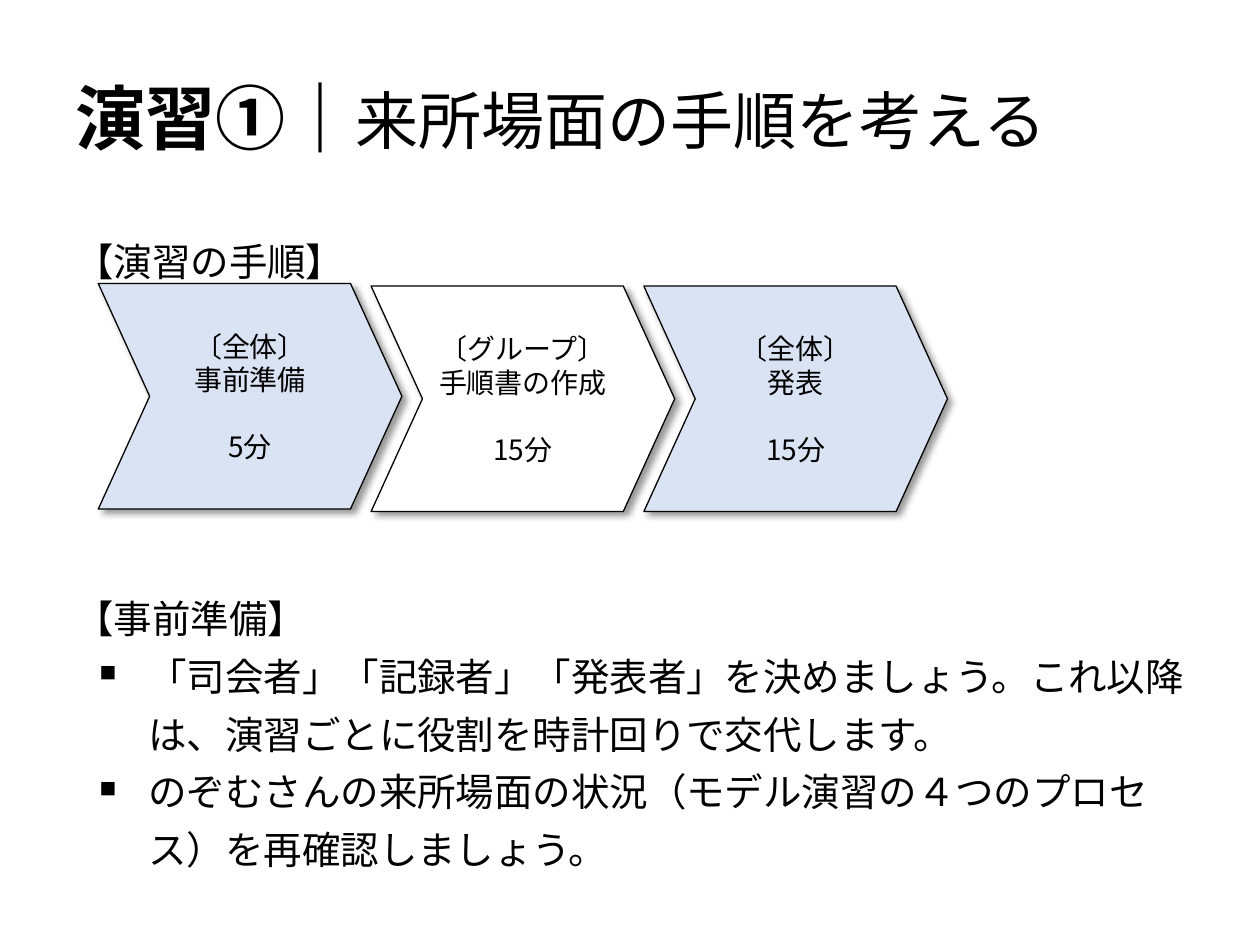
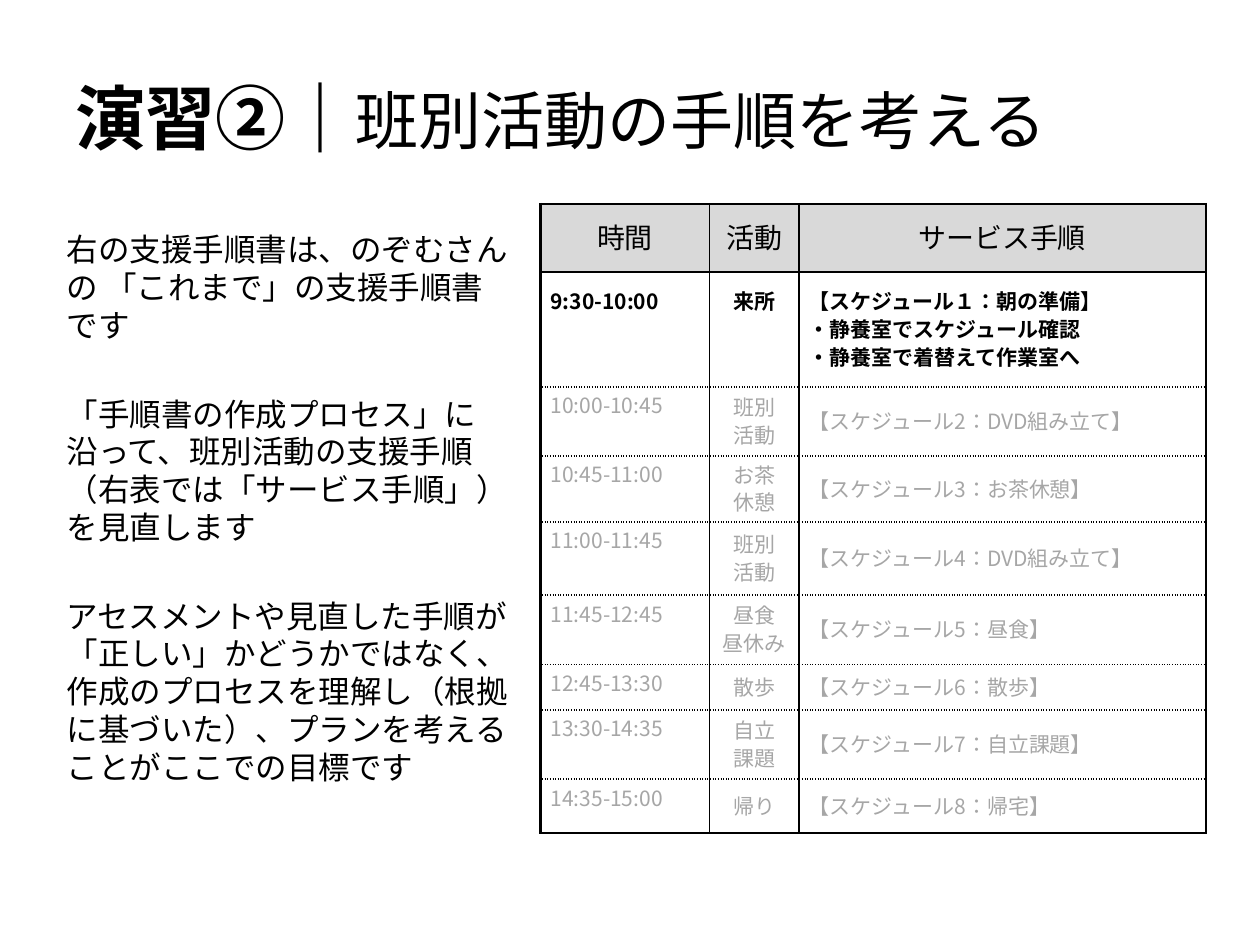
import lxml.etree
import pptx
import pptx.dml.color
import pptx.enum.lang
import pptx.enum.shapes
import pptx.enum.text
import pptx.oxml.ns
import pptx.util

Inches = pptx.util.Inches
Pt = pptx.util.Pt
ALIGN = pptx.enum.text.PP_ALIGN
ANCHOR = pptx.enum.text.MSO_ANCHOR

FONT = "Noto Sans CJK JP"
BLACK, WHITE, PALE_BLUE = "000000", "FFFFFF", "DAE3F3"
HEADER_GRAY, FADED = "D9D9D9", "A6A6A6"

TITLE_BOX = (0.5, 0.3, 9, 1.25)

STEPS = [
    ("〔全体〕", "事前準備", "5分"),
    ("〔グループ〕", "手順書の作成", "15分"),
    ("〔全体〕", "発表", "15分"),
]
PREPARATIONS = [
    "「司会者」「記録者」「発表者」を決めましょう。これ以降は、演習ごとに役割を時計回りで交代します。",
    "のぞむさんの来所場面の状況（モデル演習の４つのプロセス）を再確認しましょう。",
]
EXPLANATIONS = [
    "右の支援手順書は、のぞむさんの 「これまで」の支援手順書です",
    "「手順書の作成プロセス」に沿って、班別活動の支援手順（右表では「サービス手順」）を見直します",
    "アセスメントや見直した手順が「正しい」かどうかではなく、作成のプロセスを理解し"
    "（根拠に基づいた）、プランを考えることがここでの目標です",
]
# Row height, then the lines of each cell
SCHEDULE = [
    (0.54, "時間", "活動", "サービス手順"),
    (0.91, "9:30-10:00", "来所",
     "【スケジュール１：朝の準備】\n・静養室でスケジュール確認\n・静養室で着替えて作業室へ"),
    (0.55, "10:00-10:45", "班別\n活動", "【スケジュール2：DVD組み立て】"),
    (0.48, "10:45-11:00", "お茶\n休憩", "【スケジュール3：お茶休憩】"),
    (0.58, "11:00-11:45", "班別\n活動", "【スケジュール4：DVD組み立て】"),
    (0.55, "11:45-12:45", "昼食\n昼休み", "【スケジュール5：昼食】"),
    (0.36, "12:45-13:30", "散歩", "【スケジュール6：散歩】"),
    (0.55, "13:30-14:35", "自立\n課題", "【スケジュール7：自立課題】"),
    (0.43, "14:35-15:00", "帰り", "【スケジュール8：帰宅】"),
]
COLUMN_WIDTHS = (1.34, 0.71, 3.23)


# Shared helpers
def rgb(color):
    return pptx.dml.color.RGBColor.from_string(color)


def add_xml(parent, tag, **attributes):
    element = lxml.etree.SubElement(parent, pptx.oxml.ns.qn(tag))
    for name, value in attributes.items():
        element.set(name, str(value))
    return element


def style_font(font, size, color=BLACK, bold=False):
    font.size = Pt(size)
    font.bold = bold
    font.color.rgb = rgb(color)
    font.name = FONT
    font.language_id = pptx.enum.lang.MSO_LANGUAGE_ID.JAPANESE
    add_xml(font._rPr, "a:ea", typeface=FONT)


def write_lines(frame, lines, size, spacing, align=ALIGN.LEFT, color=BLACK, bold=False):
    """Fill a text frame, one paragraph a line, with a fixed line height."""
    for index, line in enumerate(lines):
        para = frame.paragraphs[0] if index == 0 else frame.add_paragraph()
        para.text = line
        para.alignment = align
        para.line_spacing = Pt(spacing)
        para.space_before = Pt(0)
        style_font(para.font, size, color, bold)
    return frame.paragraphs


def set_margins(target, left, top, right, bottom):
    target.margin_left, target.margin_top = Inches(left), Inches(top)
    target.margin_right, target.margin_bottom = Inches(right), Inches(bottom)


def add_text_box(page, area):
    box = page.shapes.add_textbox(*map(Inches, area))
    box.text_frame.word_wrap = True
    return box.text_frame


def add_title(page, area, label, topic):
    frame = add_text_box(page, area)
    frame.vertical_anchor = ANCHOR.MIDDLE
    for text, size, bold in ((label, 40, True), (topic, 36, False)):
        span = frame.paragraphs[0].add_run()
        span.text = text
        style_font(span.font, size, bold=bold)


# Slide 1: steps and preparation
def add_bullet(para):
    properties = para._p.get_or_add_pPr()
    properties.set("marL", str(Inches(0.58)))
    properties.set("indent", str(Inches(-0.39)))
    bullet_size = add_xml(properties, "a:buSzPct", val=60000)
    bullet = add_xml(properties, "a:buChar", char="■")
    defaults = properties.find(pptx.oxml.ns.qn("a:defRPr"))
    defaults.addprevious(bullet_size)
    defaults.addprevious(bullet)


def add_preparation(page, area):
    lines = ["【演習の手順】", "【事前準備】"] + PREPARATIONS
    paragraphs = write_lines(add_text_box(page, area), lines, 22, 33)
    paragraphs[1].space_before = Pt(171)  # room for the chevrons
    for para in paragraphs[2:]:
        add_bullet(para)


def add_soft_shadow(shape):
    shape.shadow.inherit = False
    effects = shape._element.spPr.find(pptx.oxml.ns.qn("a:effectLst"))
    shadow = add_xml(effects, "a:outerShdw", blurRad=Pt(4), dist=Pt(3),
                     dir=45 * 60000, algn="tl", rotWithShape=0)
    add_xml(add_xml(shadow, "a:srgbClr", val=BLACK), "a:alpha", val=40000)


def add_steps(page, left, top, width, height, pitch):
    group = page.shapes.add_group_shape()
    for index, lines in enumerate(STEPS):
        drop = 0.02 if index else 0
        chevron = group.shapes.add_shape(
            pptx.enum.shapes.MSO_SHAPE.CHEVRON, Inches(left + index * pitch),
            Inches(top + drop), Inches(width), Inches(height))
        chevron.adjustments[0] = 0.228
        chevron.fill.solid()
        chevron.fill.fore_color.rgb = rgb(WHITE if index % 2 else PALE_BLUE)
        chevron.line.color.rgb = rgb(BLACK)
        chevron.line.width = Pt(0.75)
        add_soft_shadow(chevron)
        frame = chevron.text_frame
        frame.word_wrap = True
        frame.vertical_anchor = ANCHOR.MIDDLE
        set_margins(frame, 0.02, 0.05, 0.02, 0.05)
        paragraphs = write_lines(frame, lines, 16, 19.3, ALIGN.CENTER)
        paragraphs[-1].space_before = Pt(19)


def build_arrival_slide(page):
    add_title(page, TITLE_BOX, "演習①｜", "来所場面の手順を考える")
    add_preparation(page, (0.5, 1.75, 9, 5.31))
    add_steps(page, 0.78, 2.25, 2.41, 1.79, pitch=2.165)


# Slide 2: explanation and schedule
def add_explanation(page, area):
    paragraphs = write_lines(add_text_box(page, area), EXPLANATIONS, 18, 21.6)
    for para in paragraphs[1:]:
        para.space_before = Pt(29)


def set_borders(cell, row, column):
    """Thick frame and header rule, dotted lines between rows."""
    last_row, last_column = len(SCHEDULE) - 1, len(COLUMN_WIDTHS) - 1
    thick_top, thick_bottom = row <= 1, row in (0, last_row)
    sides = [
        ("a:lnL", column == 0, "solid"),
        ("a:lnR", column == last_column, "solid"),
        ("a:lnT", thick_top, "solid" if thick_top else "sysDot"),
        ("a:lnB", thick_bottom, "solid" if thick_bottom else "sysDot"),
    ]
    properties = cell._tc.get_or_add_tcPr()
    for position, (tag, thick, dash) in enumerate(sides):
        line = add_xml(properties, tag, w=Pt(1.5 if thick else 1))
        add_xml(add_xml(line, "a:solidFill"), "a:srgbClr", val=BLACK)
        add_xml(line, "a:prstDash", val=dash)
        properties.insert(position, line)  # borders come before the fill


def fill_cell(cell, text, row, column):
    header, current = row == 0, row == 1
    if header:
        cell.fill.solid()
        cell.fill.fore_color.rgb = rgb(HEADER_GRAY)
        set_margins(cell, 0.06, 0.12, 0.06, 0)
        align, size, spacing = ALIGN.CENTER, 16, 12
    else:
        cell.fill.background()
        set_margins(cell, 0.08, 0.12 if current else 0.04, 0.08, 0.04)
        align = (ALIGN.LEFT, ALIGN.CENTER, ALIGN.JUSTIFY)[column]
        size, spacing = 12, 16
    at_top = current or (column == 0 and not header)
    cell.vertical_anchor = ANCHOR.TOP if at_top else ANCHOR.MIDDLE
    write_lines(cell.text_frame, text.split("\n"), size, spacing, align,
                BLACK if row <= 1 else FADED, bold=current)
    set_borders(cell, row, column)


def add_schedule(page, left, top):
    height = sum(row[0] for row in SCHEDULE)
    table = page.shapes.add_table(
        len(SCHEDULE), len(COLUMN_WIDTHS), Inches(left), Inches(top),
        Inches(sum(COLUMN_WIDTHS)), Inches(height)).table
    table.first_row = table.horz_banding = False
    for column, width in enumerate(COLUMN_WIDTHS):
        table.columns[column].width = Inches(width)
    for row, (row_height, *texts) in enumerate(SCHEDULE):
        table.rows[row].height = Inches(row_height)
        for column, text in enumerate(texts):
            fill_cell(table.cell(row, column), text, row, column)


def build_activity_slide(page):
    add_explanation(page, (0.43, 1.78, 3.74, 5.12))
    add_title(page, TITLE_BOX, "演習②｜", "班別活動の手順を考える")
    add_schedule(page, 4.29, 1.62)


def main():
    deck = pptx.Presentation()
    deck.slide_width, deck.slide_height = Inches(10), Inches(7.5)
    for build in (build_arrival_slide, build_activity_slide):
        build(deck.slides.add_slide(deck.slide_layouts[6]))
    deck.save("out.pptx")


if __name__ == "__main__":
    main()
